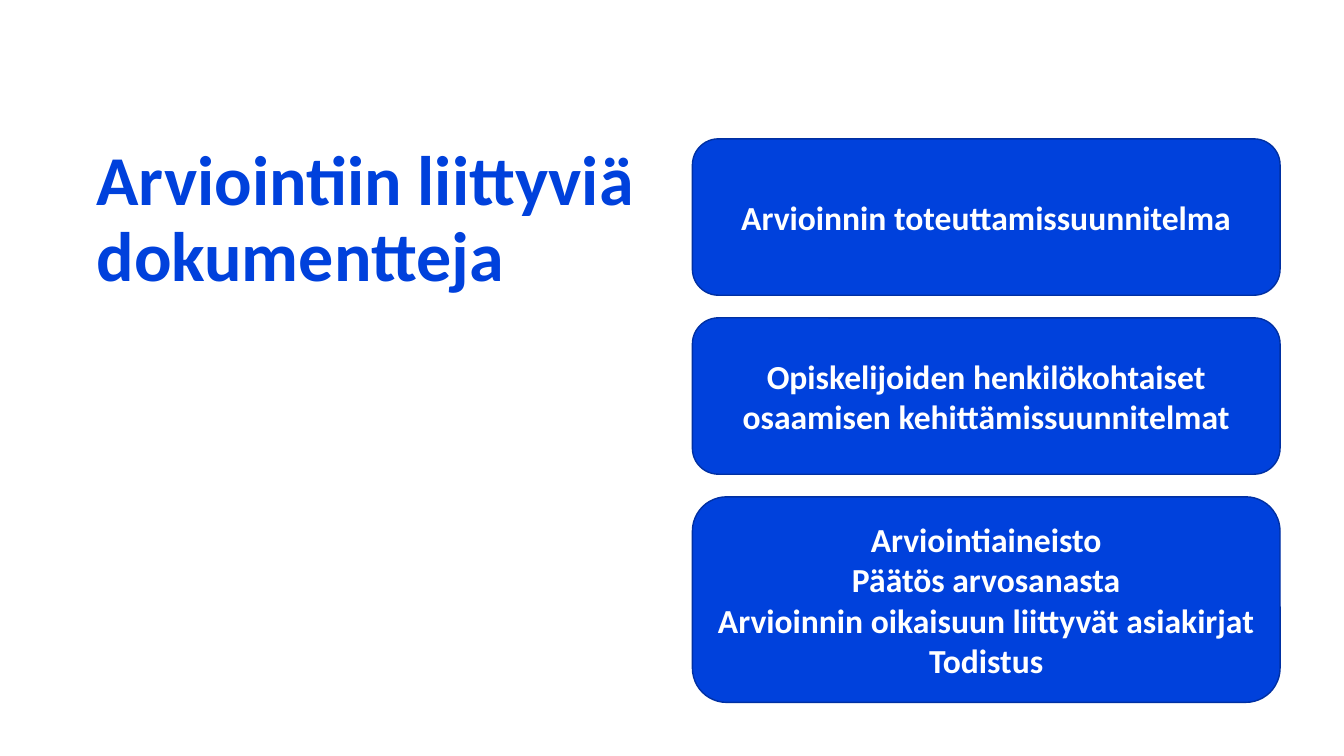
import pptx
import pptx.util
import pptx.dml.color
import pptx.enum.shapes
import pptx.enum.text

Cm = pptx.util.Cm
Pt = pptx.util.Pt
Align = pptx.enum.text.PP_ALIGN
HUES = {"blue": "0041DC", "edge": "0030A3", "white": "FFFFFF"}
LEFT, TOP, WIDTH, GAP = 17.45, 3.5, 14.81, 0.57
CARDS = [
    (3.94, ["Arvioinnin toteuttamissuunnitelma"]),
    (3.94, ["Opiskelijoiden henkilökohtaiset osaamisen kehittämissuunnitelmat"]),
    (5.18, ["Arviointiaineisto", "Päätös arvosanasta",
            "Arvioinnin oikaisuun liittyvät asiakirjat", "Todistus"]),
]


def hue(name):
    return pptx.dml.color.RGBColor.from_string(HUES[name])


def write(frame, lines, size=24, color="white", align=Align.CENTER, space=1.0):
    frame.word_wrap = True
    frame.auto_size = pptx.enum.text.MSO_AUTO_SIZE.NONE
    frame.vertical_anchor = pptx.enum.text.MSO_ANCHOR.MIDDLE
    for i, line in enumerate(lines):
        para = frame.add_paragraph() if i else frame.paragraphs[0]
        para.alignment = align
        para.line_spacing = space
        run = para.add_run()
        run.text = line
        run.font.name = "Calibri"
        run.font.size = Pt(size)
        run.font.bold = True
        run.font.color.rgb = hue(color)


class Page:
    def __init__(self, deck):
        self.slide = deck.slides.add_slide(deck.slide_layouts[5])
        self.fill = "blue"
        self.edge = "edge"

    def title(self, text, x, y, w, h):
        head = self.slide.shapes.title
        head.left, head.top, head.width, head.height = map(Cm, (x, y, w, h))
        write(head.text_frame, [text], size=50, color=self.fill,
              align=Align.LEFT, space=0.9)

    def card(self, lines, x, y, w, h):
        kind = pptx.enum.shapes.MSO_SHAPE.ROUNDED_RECTANGLE
        box = self.slide.shapes.add_shape(kind, *map(Cm, (x, y, w, h)))
        box.shadow.inherit = False
        box.fill.solid()
        box.fill.fore_color.rgb = hue(self.fill)
        box.line.color.rgb = hue(self.edge)
        box.line.width = Pt(1)
        write(box.text_frame, lines)


def main():
    deck = pptx.Presentation()
    deck.slide_width = Cm(33.87)
    deck.slide_height = Cm(19.05)
    page = Page(deck)
    page.title("Arviointiin liittyviä dokumentteja", 2.18, 3.6, 23.04, 3.94)
    top = TOP
    for high, lines in CARDS:
        page.card(lines, LEFT, top, WIDTH, high)
        top += high + GAP
    deck.save("out.pptx")


if __name__ == "__main__":
    main()
